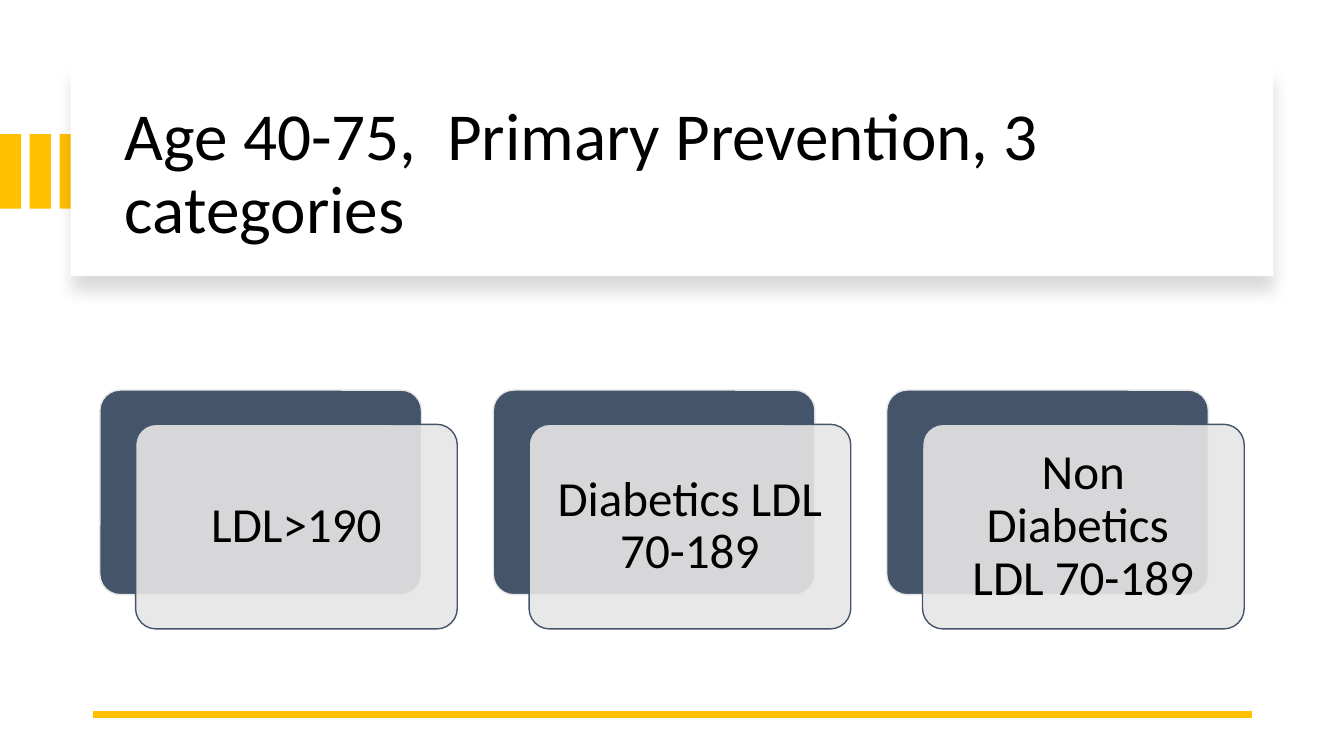
from lxml import etree
from pptx import Presentation
from pptx.dml.color import RGBColor
from pptx.enum.shapes import MSO_CONNECTOR as CONN, MSO_SHAPE as SHAPE
from pptx.enum.text import MSO_ANCHOR as ANCHOR, PP_ALIGN as ALIGN
from pptx.oxml import parse_xml
from pptx.oxml.ns import nsdecls, qn
from pptx.util import Inches, Pt

FONT = "Calibri"
GOLD, NAVY, PALE, WHITE, BLACK = "FFC000", "44546A", "E7E6E6", "FFFFFF", "000000"
CATEGORIES = ["LDL>190", "Diabetics LDL 70-189", "Non Diabetics  LDL 70-189"]


def rgb(color):
    return RGBColor.from_string(color)


def add_box(shapes, kind, left, top, width, height, fill, line=None):
    """Add a filled preset shape without shadow, outlined if a line colour is given."""
    sp = shapes.add_shape(kind, Inches(left), Inches(top), Inches(width), Inches(height))
    sp.shadow.inherit = False
    sp.fill.solid()
    sp.fill.fore_color.rgb = rgb(fill)
    if line:
        sp.line.color.rgb = rgb(line)
        sp.line.width = Pt(1)
    else:
        sp.line.fill.background()
    return sp


def write_text(sp, text, size, align, inset=None):
    tf = sp.text_frame
    tf.word_wrap = True
    tf.vertical_anchor = ANCHOR.MIDDLE
    if inset is not None:
        tf.margin_left = tf.margin_right = tf.margin_top = tf.margin_bottom = Inches(inset)
    p = tf.paragraphs[0]
    p.alignment = align
    p.line_spacing = 0.9
    r = p.add_run()
    r.text = text
    r.font.name = FONT
    r.font.size = Pt(size)
    r.font.color.rgb = rgb(BLACK)


def set_alpha(sp, percent):
    color = sp._element.spPr.find(qn("a:solidFill"))[0]
    etree.SubElement(color, qn("a:alpha")).set("val", str(percent * 1000))


def drop_shadow(sp):
    """Give the shape a soft shadow that falls straight down."""
    spPr = sp._element.spPr
    spPr.remove(spPr.find(qn("a:effectLst")))
    spPr.append(parse_xml(
        f'<a:effectLst {nsdecls("a")}><a:outerShdw blurRad="{Pt(11)}" dist="{Pt(10)}" '
        f'dir="5400000" algn="t" rotWithShape="0"><a:srgbClr val="{BLACK}">'
        '<a:alpha val="15000"/></a:srgbClr></a:outerShdw></a:effectLst>'))


def add_accent_bars(slide, left, top, width, height, count=3):
    bars = slide.shapes.add_group_shape()
    bar = 0.21
    step = (width - bar) / (count - 1)
    for i in range(count):
        add_box(bars.shapes, SHAPE.RECTANGLE, left + i * step, top, bar, height, GOLD)


def add_title_panel(slide, left, top, width, height, title):
    panel = add_box(slide.shapes, SHAPE.RECTANGLE, left, top, width, height, WHITE)
    drop_shadow(panel)
    box = slide.shapes.add_textbox(Inches(left + 0.44), Inches(top + 0.22),
                                   Inches(width - 0.8), Inches(height - 0.37))
    write_text(box, title, 48, ALIGN.LEFT)


def add_category_cards(slide, left, top, width, height, labels):
    """Place a row of cards, each a pale sheet offset over a dark one."""
    cards = slide.shapes.add_group_shape()
    dx, dy = 0.355, 0.34
    card_w, card_h = 3.19, height - dy
    step = (width - card_w - dx) / (len(labels) - 1)
    for i, label in enumerate(labels):
        x = left + i * step
        back = add_box(cards.shapes, SHAPE.ROUNDED_RECTANGLE,
                       x, top, card_w, card_h, NAVY, PALE)
        front = add_box(cards.shapes, SHAPE.ROUNDED_RECTANGLE,
                        x + dx, top + dy, card_w, card_h, PALE, NAVY)
        for sp in (back, front):
            sp.adjustments[0] = 0.1
        set_alpha(front, 90)
        write_text(front, label, 35, ALIGN.CENTER, inset=0.21)


def add_footer_rule(slide, left, top, width):
    rule = slide.shapes.add_connector(CONN.STRAIGHT, Inches(left + width), Inches(top),
                                      Inches(left), Inches(top))
    rule.line.color.rgb = rgb(GOLD)
    rule.line.width = Pt(4.5)
    etree.SubElement(rule._element.spPr, qn("a:effectLst"))


def main():
    prs = Presentation()
    prs.slide_width, prs.slide_height = Inches(13.33), Inches(7.5)
    slide = prs.slides.add_slide(prs.slide_layouts[6])
    add_accent_bars(slide, 0, 1.33, 0.8, 0.74)
    add_title_panel(slide, 0.7, 0.67, 11.93, 2.07,
                    "Age 40-75,  Primary Prevention, 3 categories")
    add_footer_rule(slide, 0.92, 7.09, 11.5)
    add_category_cards(slide, 0.99, 3.87, 11.35, 2.37, CATEGORIES)
    prs.save("out.pptx")


if __name__ == "__main__":
    main()
